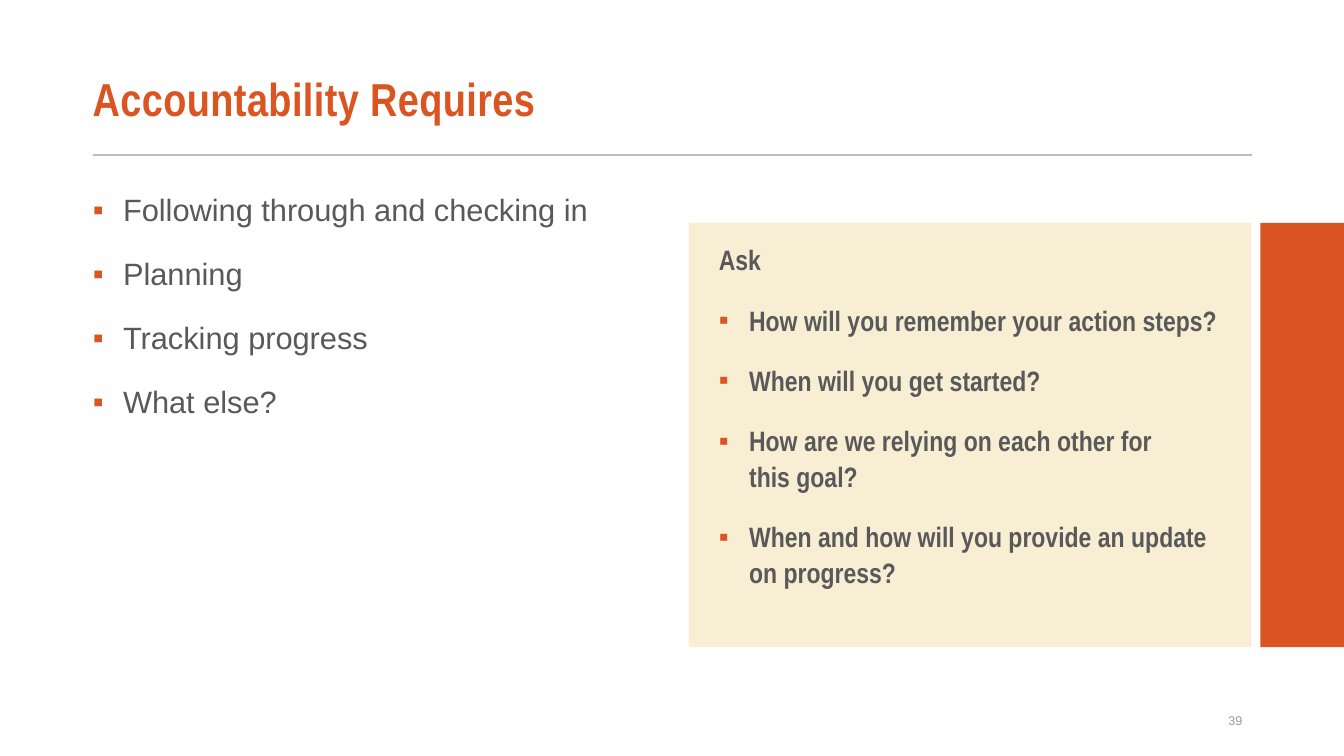
from lxml import etree
from pptx import Presentation
from pptx.dml.color import RGBColor
from pptx.enum.shapes import MSO_CONNECTOR, MSO_SHAPE
from pptx.enum.text import MSO_ANCHOR, PP_ALIGN
from pptx.oxml.ns import qn
from pptx.util import Inches, Pt

ORANGE = RGBColor(0xDA, 0x55, 0x21)
CREAM = RGBColor(0xF7, 0xEE, 0xD4)
TEXT_GRAY = RGBColor(0x59, 0x59, 0x59)
RULE_GRAY = RGBColor(0xBD, 0xBD, 0xBD)
NUMBER_GRAY = RGBColor(0x9B, 0x9B, 0x9B)
BODY_FONT, HEAD_FONT = "Arial", "Arial Narrow"

LEFT, RIGHT = 0.92, 12.42
PANEL_TOP, PANEL_HEIGHT = 2.21, 4.21

REQUIREMENTS = ["Following through and checking in", "Planning",
                "Tracking progress", "What else?"]
QUESTIONS = ["How will you remember your action steps?",
             "When will you get started?",
             "How are we relying on each other for\nthis goal?",
             "When and how will you provide an update on progress?"]


def add_frame(s, x, y, w, h, anchor=MSO_ANCHOR.TOP, left_inset=0):
    tf = s.shapes.add_textbox(Inches(x), Inches(y), Inches(w), Inches(h)).text_frame
    tf.word_wrap = True
    tf.vertical_anchor = anchor
    tf.margin_left = Inches(left_inset)
    return tf


def add_text(p, text, font, size, color, bold=False):
    """Add runs to a paragraph, with a line break at each newline."""
    for i, line in enumerate(text.split("\n")):
        if i:
            p.add_line_break()
        r = p.add_run()
        r.text = line
        r.font.name, r.font.size, r.font.bold = font, Pt(size), bold
        r.font.color.rgb = color


def add_bullet(p):
    pPr = p._p.get_or_add_pPr()
    pPr.set("marL", str(Inches(0.3)))
    pPr.set("indent", str(-Inches(0.3)))
    color = etree.SubElement(pPr, qn("a:buClr"))
    etree.SubElement(color, qn("a:srgbClr"), val=str(ORANGE))
    etree.SubElement(pPr, qn("a:buFont"), typeface=BODY_FONT)
    etree.SubElement(pPr, qn("a:buChar"), char="▪")


def add_list(s, x, y, w, h, items, font, size, bold=False, heading=None):
    tf = add_frame(s, x, y, w, h)
    entries = ([heading] if heading else []) + items
    for i, text in enumerate(entries):
        p = tf.add_paragraph() if i else tf.paragraphs[0]
        p.line_spacing = 1.05
        if i:
            p.space_before = Pt(18)
        if text != heading:
            add_bullet(p)
        add_text(p, text, font, size, TEXT_GRAY, bold)


def add_block(s, x, y, w, h, color):
    sp = s.shapes.add_shape(MSO_SHAPE.RECTANGLE, Inches(x), Inches(y), Inches(w), Inches(h))
    sp.shadow.inherit = False
    sp.fill.solid()
    sp.fill.fore_color.rgb = color
    sp.line.fill.background()


def add_header(s, x, y, w, title):
    tf = add_frame(s, x, y, w, 0.95, MSO_ANCHOR.MIDDLE)
    p = tf.paragraphs[0]
    p.line_spacing = 0.87
    add_text(p, title, HEAD_FONT, 33, ORANGE, True)
    p.runs[0].font._element.set("spc", "30")
    rule_y = Inches(y + 1)
    rule = s.shapes.add_connector(MSO_CONNECTOR.STRAIGHT, Inches(x), rule_y,
                                  Inches(x + w), rule_y)
    rule.line.color.rgb = RULE_GRAY
    rule.line.width = Pt(1.5)
    etree.SubElement(rule._element.spPr, qn("a:effectLst"))


def add_ask_panel(s, x, y, w, h):
    add_block(s, x, y, w, h, CREAM)
    add_list(s, x + 0.3, y + 0.13, w - 0.33, h - 0.29, QUESTIONS, HEAD_FONT, 20,
             bold=True, heading="Ask")


def add_page_number(s, right, y, number):
    tf = add_frame(s, right - 3, y, 3, 0.4, MSO_ANCHOR.MIDDLE, left_inset=0.1)
    p = tf.paragraphs[0]
    p.alignment = PP_ALIGN.RIGHT
    add_text(p, number, BODY_FONT, 9, NUMBER_GRAY)


def main():
    prs = Presentation()
    prs.slide_width, prs.slide_height = Inches(13.33), Inches(7.5)
    s = prs.slides.add_slide(prs.slide_layouts[6])
    add_header(s, LEFT, 0.54, RIGHT - LEFT, "Accountability Requires")
    add_list(s, LEFT, 1.83, 5.41, 5.07, REQUIREMENTS, BODY_FONT, 22)
    add_ask_panel(s, 6.83, PANEL_TOP, 5.58, PANEL_HEIGHT)
    add_block(s, 12.5, PANEL_TOP, 0.83, PANEL_HEIGHT, ORANGE)
    add_page_number(s, RIGHT, 6.95, "39")
    prs.save("out.pptx")


if __name__ == "__main__":
    main()
